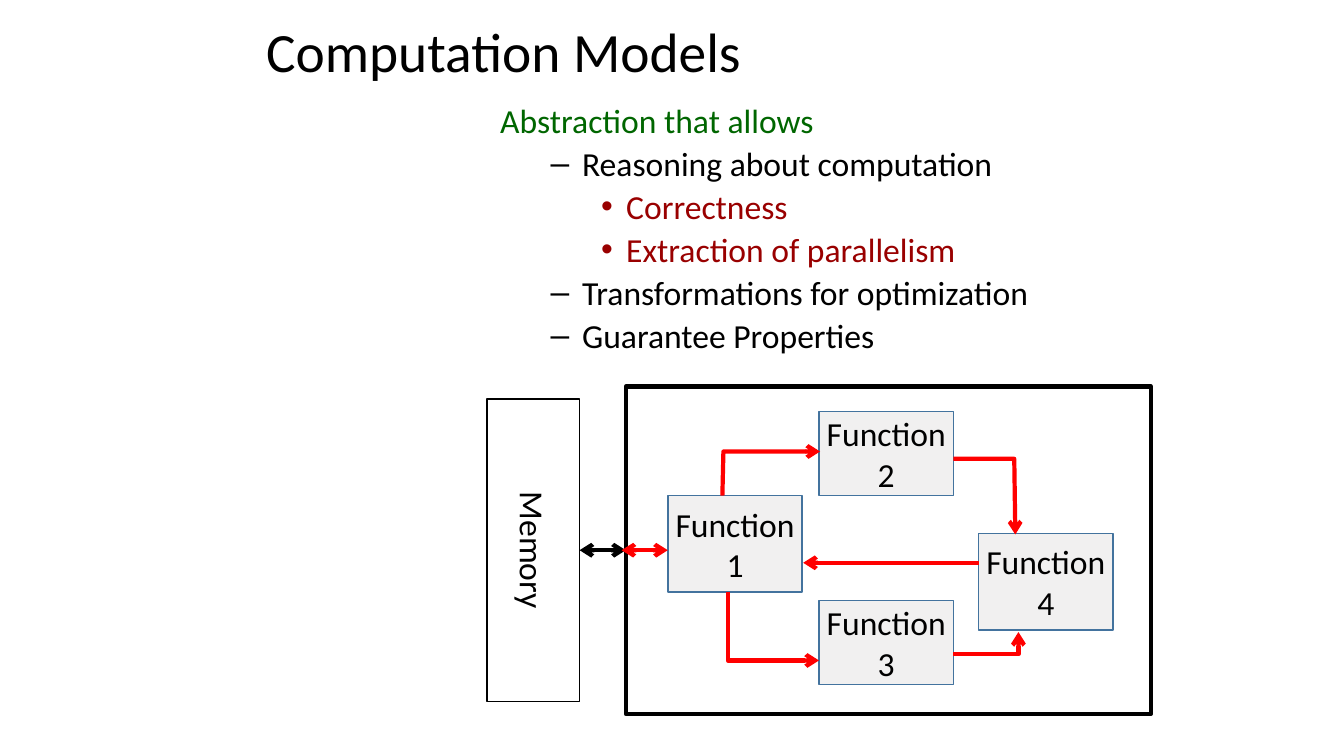
from lxml.etree import SubElement
from pptx import Presentation
from pptx.dml.color import RGBColor
from pptx.enum.shapes import MSO_CONNECTOR, MSO_SHAPE
from pptx.enum.text import MSO_ANCHOR, PP_ALIGN
from pptx.oxml.ns import qn
from pptx.util import Pt

SCALE = 9525  # EMU in one px
COLOURS = {
    "black": "000000", "green": "006600", "maroon": "990000",
    "red": "FF0000", "steel": "43739E", "mist": "F1F0F0",
}
# Bullet, left margin and hanging indent in px for each outline level
LEVELS = [(None, 36, 36), ("–", 78, 30), ("•", 120, 24)]


def px(length):
    return length * SCALE


def rgb(name):
    return RGBColor.from_string(COLOURS[name])


def write(para, text, colour="black", size=24, font="Calibri", align=None,
          before=0, spacing=None):
    span = para.add_run()
    span.text = text
    span.font.name = font
    span.font.size = Pt(size)
    span.font.color.rgb = rgb(colour)
    para.alignment = align
    para.space_before = Pt(before)
    para.line_spacing = spacing


def set_level(para, level):
    """Give a paragraph the indents and bullet of its outline level."""
    bullet, margin, hanging = LEVELS[level]
    para.level = level
    properties = para._p.get_or_add_pPr()
    properties.set("marL", str(px(margin)))
    properties.set("indent", str(px(-hanging)))
    if bullet:
        SubElement(properties, qn("a:buFont"), typeface="Arial")
        SubElement(properties, qn("a:buChar"), char=bullet)
    else:
        SubElement(properties, qn("a:buNone"))


class Canvas:
    def __init__(self, page, line_width=3):
        self.page = page
        self.line_width = line_width

    def text(self, left, top, width, height, anchor=MSO_ANCHOR.TOP):
        box = self.page.shapes.add_textbox(*map(px, (left, top, width, height)))
        frame = box.text_frame
        frame.word_wrap = True
        frame.vertical_anchor = anchor
        return frame

    def title(self, text, *place):
        frame = self.text(*place, anchor=MSO_ANCHOR.MIDDLE)
        write(frame.paragraphs[0], text, size=39.6, spacing=0.9)

    def outline(self, items, *place):
        frame = self.text(*place)
        for index, (level, text, colour) in enumerate(items):
            para = frame.add_paragraph() if index else frame.paragraphs[0]
            write(para, text, colour, before=2)
            set_level(para, level)

    def box(self, left, top, width, height, lines=(), fill=None,
            border="black", border_width=1, vertical=False):
        box = self.page.shapes.add_shape(
            MSO_SHAPE.RECTANGLE, *map(px, (left, top, width, height)))
        box.shadow.inherit = False
        if fill:
            box.fill.solid()
            box.fill.fore_color.rgb = rgb(fill)
        else:
            box.fill.background()
        box.line.color.rgb = rgb(border)
        box.line.width = Pt(border_width)
        frame = box.text_frame
        frame.word_wrap = True
        frame.vertical_anchor = MSO_ANCHOR.MIDDLE
        if vertical:
            frame._txBody.bodyPr.set("vert", "vert")
        else:
            frame.margin_left = frame.margin_right = 0
        for index, text in enumerate(lines):
            para = frame.add_paragraph() if index else frame.paragraphs[0]
            write(para, text, align=PP_ALIGN.CENTER)

    def function(self, number, left, top, height):
        self.box(left, top, 128, height, ["Function", str(number)],
                 fill="mist", border="steel")

    def style_arrow(self, arrow, colour, both_ends):
        arrow.line.color.rgb = rgb(colour)
        arrow.line.width = Pt(self.line_width)
        outline = arrow.line._get_or_add_ln()
        if both_ends:
            SubElement(outline, qn("a:headEnd"), type="arrow")
        SubElement(outline, qn("a:tailEnd"), type="arrow")

    def arrow(self, start, end, colour="red", both_ends=False):
        arrow = self.page.shapes.add_connector(
            MSO_CONNECTOR.STRAIGHT, *map(px, start + end))
        self.style_arrow(arrow, colour, both_ends)
        SubElement(arrow._element.spPr, qn("a:effectLst"))

    def bent_arrow(self, start, *points):
        builder = self.page.shapes.build_freeform(*start, scale=SCALE)
        builder.add_line_segments(points, close=False)
        arrow = builder.convert_to_shape()
        arrow.shadow.inherit = False
        arrow.fill.background()
        self.style_arrow(arrow, "red", both_ends=False)


def main():
    deck = Presentation()
    deck.slide_width, deck.slide_height = px(1280), px(720)
    canvas = Canvas(deck.slides.add_slide(deck.slide_layouts[6]))

    canvas.title("Computation Models", 244, 32, 512, 39)
    canvas.outline([
        (0, "Abstraction that allows", "green"),
        (1, "Reasoning about computation", "black"),
        (2, "Correctness", "maroon"),
        (2, "Extraction of parallelism", "maroon"),
        (1, "Transformations for optimization", "black"),
        (1, "Guarantee Properties", "black"),
    ], 467, 90, 641, 262)

    canvas.box(596, 368, 500, 312, border_width=3)
    canvas.box(464, 380, 88, 288, ["Memory"], vertical=True)
    canvas.arrow((552, 524), (596, 524), "black", both_ends=True)

    for number, left, top, height in [
        (1, 636, 472, 92), (2, 780, 392, 80),
        (4, 932, 508, 92), (3, 780, 572, 80),
    ]:
        canvas.function(number, left, top, height)

    canvas.bent_arrow((688, 472), (689, 430), (781, 430))
    canvas.bent_arrow((693, 564), (693, 629), (780, 629))
    canvas.bent_arrow((908, 437), (966, 437), (967, 509))
    canvas.bent_arrow((908, 623), (970, 623), (970, 602))
    canvas.arrow((592, 524), (636, 524), both_ends=True)
    canvas.arrow((932, 536), (765, 536))

    deck.save("out.pptx")


if __name__ == "__main__":
    main()
